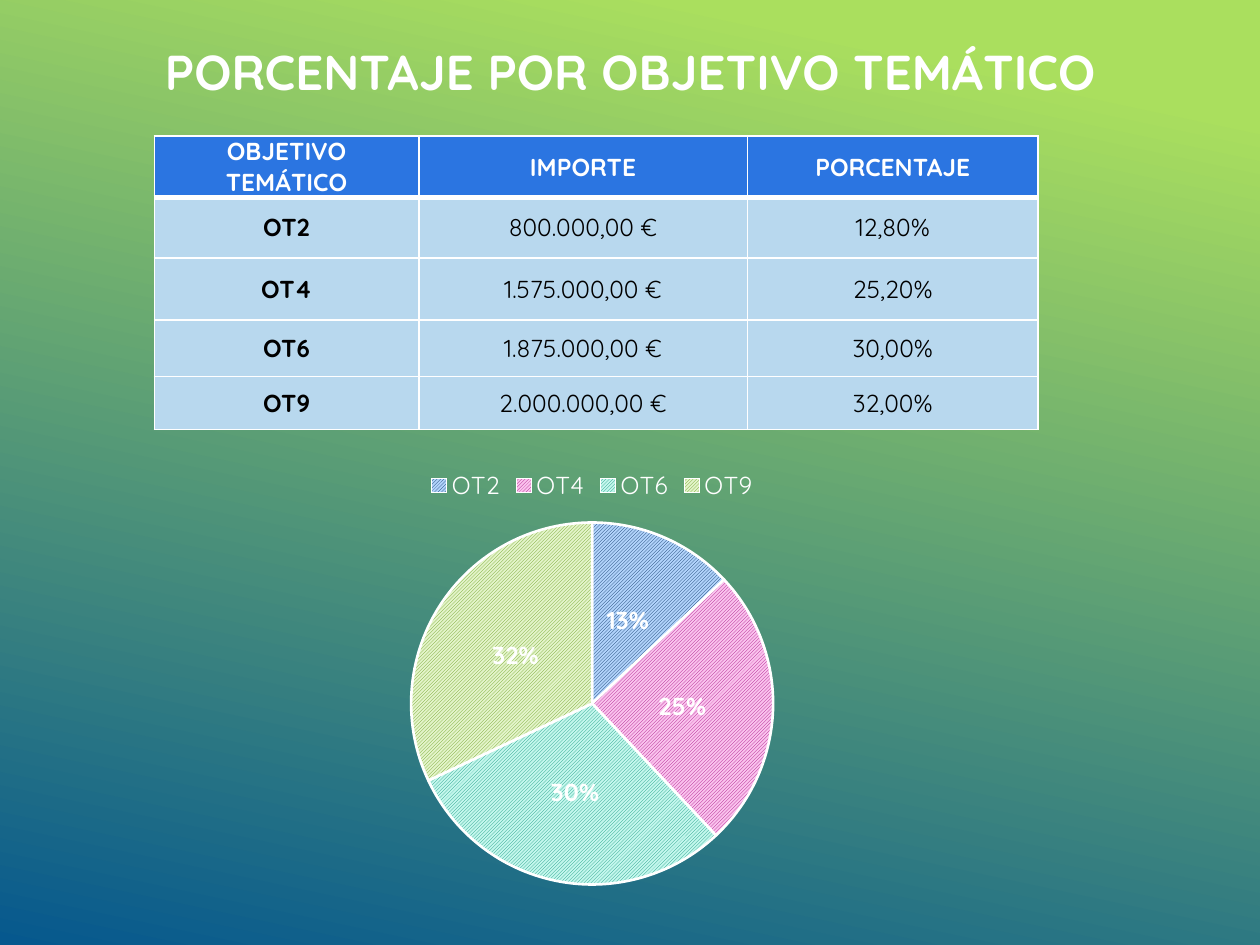
import dataclasses

import lxml.etree
import pptx
import pptx.chart.data
import pptx.dml.color
import pptx.enum.chart
import pptx.enum.dml
import pptx.enum.text
import pptx.oxml
import pptx.oxml.ns
import pptx.util


@dataclasses.dataclass(frozen=True)
class Theme:
    font: str = "Quicksand"
    title_size: int = 28
    body_size: int = 14
    white: str = "FFFFFF"
    black: str = "000000"
    header: str = "2B75E1"
    row: str = "B8D8EE"
    gradient: tuple = ((0.1, "AADF5E"), (1, "06588E"))
    gradient_angle: int = 102
    # Hatch colour and ground colour of each slice
    slices: tuple = (("052F61", "B1D3FB"), ("A50E82", "FAC2ED"),
                     ("14967C", "C3F7ED"), ("6A9E1F", "E3F4C9"))


THEME = Theme()
SLIDE_WIDTH = pptx.util.Inches(10)
SLIDE_HEIGHT = pptx.util.Inches(7.5)

HEADINGS = ("OBJETIVO TEMÁTICO", "IMPORTE", "PORCENTAJE")
OBJECTIVES = (("OT2", "800.000,00 €", "12,80%"),
              ("OT4", "1.575.000,00 €", "25,20%"),
              ("OT6", "1.875.000,00 €", "30,00%"),
              ("OT9", "2.000.000,00 €", "32,00%"))
PIE_SHARES = (13, 25, 30, 32)


def percent_box(left, top, width, height):
    """Turn percentages of the slide's size into a box in EMU."""
    return (int(SLIDE_WIDTH * left / 100), int(SLIDE_HEIGHT * top / 100),
            int(SLIDE_WIDTH * width / 100), int(SLIDE_HEIGHT * height / 100))


def split(length, weights):
    """Divide a length in proportion to the weights."""
    return [int(length * weight / sum(weights)) for weight in weights]


def rgb(value):
    return pptx.dml.color.RGBColor.from_string(value)


def format_font(font, size=THEME.body_size, color=THEME.white, bold=False):
    font.name = THEME.font
    font.size = pptx.util.Pt(size)
    font.bold = bold
    font.color.rgb = rgb(color)


def write_text(frame, text, **font_format):
    """Write one centred paragraph."""
    paragraph = frame.paragraphs[0]
    paragraph.alignment = pptx.enum.text.PP_ALIGN.CENTER
    run = paragraph.add_run()
    run.text = text
    format_font(run.font, **font_format)


def paint_background(slide):
    fill = slide.background.fill
    fill.gradient()
    fill.gradient_angle = 360 - THEME.gradient_angle
    for stop, (position, color) in zip(fill.gradient_stops, THEME.gradient):
        stop.position = position
        stop.color.rgb = rgb(color)


def place_title(slide, box):
    title = slide.shapes.title
    title.left, title.top, title.width, title.height = box
    title.text_frame.vertical_anchor = pptx.enum.text.MSO_ANCHOR.MIDDLE
    write_text(title.text_frame, "PORCENTAJE POR OBJETIVO TEMÁTICO",
               size=THEME.title_size, bold=True)


def draw_borders(cell, top=1, bottom=1):
    properties = cell._tc.get_or_add_tcPr()
    widths = {"lnL": 1, "lnR": 1, "lnT": top, "lnB": bottom}
    for position, (side, width) in enumerate(widths.items()):
        properties.insert(position, pptx.oxml.parse_xml(
            f'<a:{side} {pptx.oxml.ns.nsdecls("a")} w="{pptx.util.Pt(width)}">'
            f'<a:solidFill><a:srgbClr val="{THEME.white}"/></a:solidFill>'
            f'</a:{side}>'))


def place_table(slide, box):
    rows = (HEADINGS,) + OBJECTIVES
    table = slide.shapes.add_table(len(rows), len(HEADINGS), *box).table
    for column, width in zip(table.columns, split(box[2], (210, 261, 231))):
        column.width = width
    for row, height in zip(table.rows, split(box[3], (45, 48, 49, 45, 42))):
        row.height = height

    for r, texts in enumerate(rows):
        heading = r == 0
        for c, text in enumerate(texts):
            cell = table.cell(r, c)
            cell.margin_left = cell.margin_right = pptx.util.Inches(0.07)
            cell.margin_top = cell.margin_bottom = 0
            cell.vertical_anchor = pptx.enum.text.MSO_ANCHOR.MIDDLE
            write_text(cell.text_frame, text, bold=heading or c == 0,
                       color=THEME.white if heading else THEME.black)
            cell.fill.solid()
            cell.fill.fore_color.rgb = rgb(THEME.header if heading else THEME.row)
            draw_borders(cell, top=3 if r == 1 else 1, bottom=3 if heading else 1)


def fix_plot_area(chart, x, y, w, h):
    """Place the plot by shares of the chart's size."""
    plot_area = chart._chartSpace.chart.plotArea
    for layout in plot_area.findall(pptx.oxml.ns.qn("c:layout")):
        plot_area.remove(layout)
    layout = pptx.oxml.parse_xml(
        f'<c:layout {pptx.oxml.ns.nsdecls("c")}><c:manualLayout/></c:layout>')
    settings = {"layoutTarget": "inner", "xMode": "edge", "yMode": "edge",
                "x": x, "y": y, "w": w, "h": h}
    for tag, value in settings.items():
        lxml.etree.SubElement(layout[0], pptx.oxml.ns.qn(f"c:{tag}"), val=str(value))
    plot_area.insert(0, layout)


def place_pie(slide, box):
    data = pptx.chart.data.CategoryChartData()
    data.categories = [objective[0] for objective in OBJECTIVES]
    data.add_series("Series 1", PIE_SHARES)
    chart = slide.shapes.add_chart(
        pptx.enum.chart.XL_CHART_TYPE.PIE, *box, data).chart
    format_font(chart.font, size=10)
    chart.has_title = False
    chart.has_legend = True
    chart.legend.position = pptx.enum.chart.XL_LEGEND_POSITION.TOP
    chart.legend.include_in_layout = False
    format_font(chart.legend.font)
    fix_plot_area(chart, x=0.22, y=0.15, w=0.56, h=0.81)

    pie = chart.plots[0]
    pie.vary_by_categories = True
    for index, (hatch, ground) in enumerate(THEME.slices):
        slice_format = pie.series[0].points[index].format
        slice_format.fill.patterned()
        slice_format.fill.pattern = pptx.enum.dml.MSO_PATTERN.LIGHT_UPWARD_DIAGONAL
        slice_format.fill.fore_color.rgb = rgb(hatch)
        slice_format.fill.back_color.rgb = rgb(ground)
        slice_format.line.color.rgb = rgb(THEME.white)
        slice_format.line.width = pptx.util.Pt(1.5)

    labels = pie.series[0].data_labels
    labels.show_percentage = True
    labels.show_value = False
    labels.number_format = "0%"
    labels.number_format_is_linked = False
    labels.position = pptx.enum.chart.XL_LABEL_POSITION.CENTER
    format_font(labels.font, bold=True)


def main():
    presentation = pptx.Presentation()
    presentation.slide_width = SLIDE_WIDTH
    presentation.slide_height = SLIDE_HEIGHT
    title_only = presentation.slide_layouts[5]
    slide = presentation.slides.add_slide(title_only)
    paint_background(slide)
    place_title(slide, percent_box(7, 3.7, 86, 7.6))
    place_table(slide, percent_box(12.25, 14.4, 70.15, 30.6))
    place_pie(slide, percent_box(20.8, 48.2, 52.4, 47.3))
    presentation.save("out.pptx")


if __name__ == "__main__":
    main()
